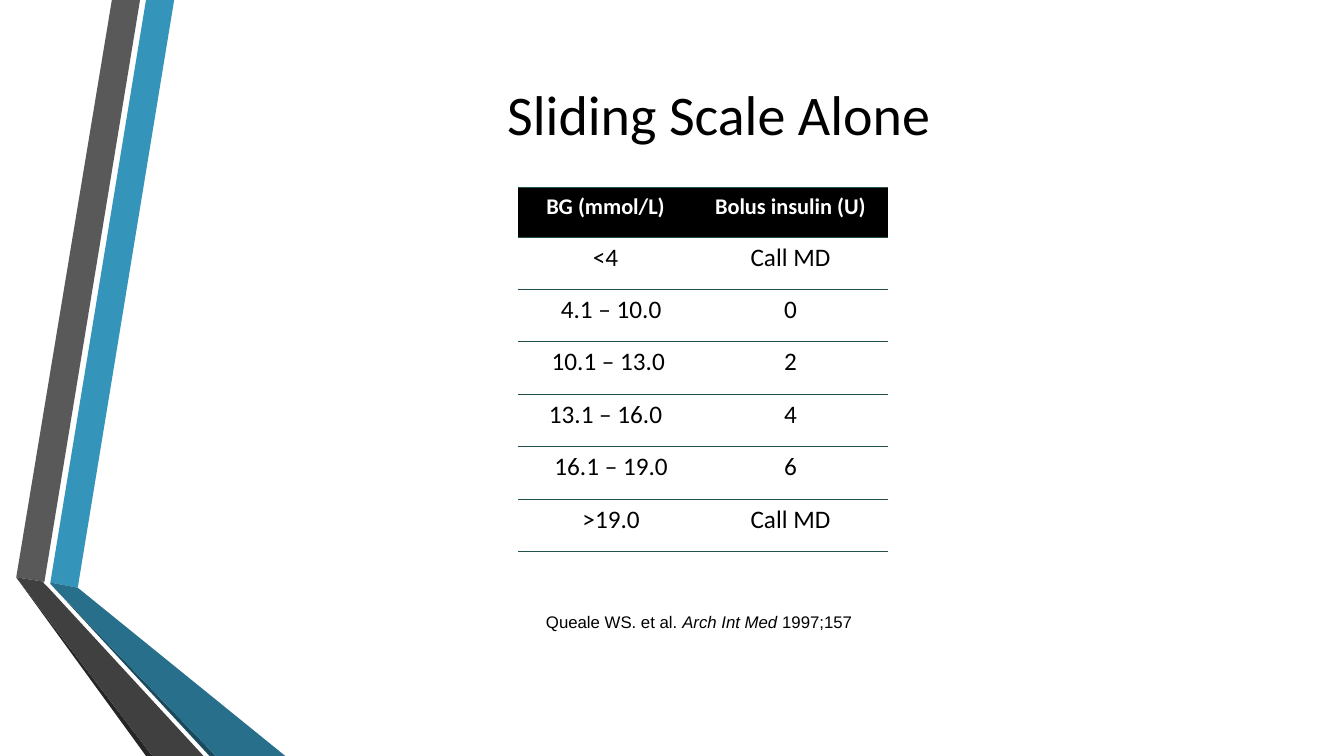
"""Builds the sliding scale insulin slide."""
from dataclasses import dataclass

from lxml import etree
from pptx import Presentation
from pptx.dml.color import RGBColor
from pptx.enum import text as text_enums
from pptx.oxml import ns
from pptx.slide import Slide
from pptx.table import _Cell
from pptx.text.text import _Paragraph
from pptx.util import Cm, Pt

COLOURS = {
    "black": "000000",
    "white": "FFFFFF",
    "rule": "23514E",
    "blue": "3494BA",
    "grey": "595959",
    "shadow": "262626",
    "navy": "1A4A5D",
    "teal": "276F8B",
    "charcoal": "404040",
}
CENTRE = text_enums.PP_ALIGN.CENTER


@dataclass(frozen=True)
class Ribbon:
    colour: str
    points: tuple[tuple[float, float], ...]


@dataclass(frozen=True)
class Dose:
    glucose: str
    insulin: str
    indent: float = 0


RIBBONS = (
    Ribbon("blue", ((1.27, 14.68), (1.96, 14.81), (4.39, 0), (3.68, 0))),
    Ribbon("grey", ((3.53, 0), (2.82, 0), (0.41, 14.55), (1.12, 14.66))),
    Ribbon("shadow", ((0.41, 14.55), (3.68, 19.05), (3.84, 19.05))),
    Ribbon("navy", ((1.27, 14.71), (5.28, 19.05), (5.44, 19.05))),
    Ribbon("teal", ((1.27, 14.68), (1.27, 14.71), (5.44, 19.05),
                    (7.19, 19.05), (1.96, 14.81))),
    Ribbon("charcoal", ((0.41, 14.55), (3.84, 19.05), (5.13, 19.05),
                        (1.22, 14.81), (1.09, 14.68), (1.12, 14.66))),
)
DOSES = (
    Dose("BG (mmol/L)", "Bolus insulin (U)"),
    Dose("<4", "Call MD"),
    Dose("4.1 – 10.0", "0", 0.28),
    Dose("10.1 – 13.0", "2", 0.14),
    Dose("13.1 – 16.0", "4"),
    Dose("16.1 – 19.0", "6", 0.28),
    Dose(">19.0", "Call MD", 0.28),
)
CITATION = (("Queale WS. et al. ", False), ("Arch Int Med", True), (" 1997;157", False))


def rgb(name: str) -> RGBColor:
    """Return a named colour."""
    return RGBColor.from_string(COLOURS[name])


def add_run(paragraph: _Paragraph, words: str, size: float, colour: str = "black",
            font: str = "Calibri", bold: bool = False, italic: bool = False) -> None:
    """Add one formatted run."""
    run = paragraph.add_run()
    run.text = words
    run.font.name, run.font.size = font, Pt(size)
    run.font.bold, run.font.italic = bold, italic
    run.font.color.rgb = rgb(colour)


def draw_ribbon(slide: Slide, ribbon: Ribbon) -> None:
    """Draw one filled piece of the folded ribbon."""
    start, *others = [(Cm(x), Cm(y)) for x, y in ribbon.points]
    builder = slide.shapes.build_freeform(*start)
    builder.add_line_segments(others, close=True)
    shape = builder.convert_to_shape()
    shape.shadow.inherit = False
    shape.fill.solid()
    shape.fill.fore_color.rgb = rgb(ribbon.colour)
    shape.line.fill.background()


def rule_cell(cell: _Cell) -> None:
    """Rule a cell above and below, and leave its sides open."""
    properties = cell._tc.get_or_add_tcPr()
    for side in ("lnL", "lnR", "lnT", "lnB"):
        line = etree.SubElement(properties, ns.qn(f"a:{side}"), w=str(Pt(0.5)))
        if side in ("lnL", "lnR"):
            etree.SubElement(line, ns.qn("a:noFill"))
        else:
            fill = etree.SubElement(line, ns.qn("a:solidFill"))
            etree.SubElement(fill, ns.qn("a:srgbClr"), val=COLOURS["rule"])


def fill_cell(cell: _Cell, words: str, is_header: bool, indent: float = 0) -> None:
    """Format a table cell and write its words."""
    rule_cell(cell)
    if is_header:
        cell.fill.solid()
        cell.fill.fore_color.rgb = rgb("black")
    else:
        cell.fill.background()
    cell.margin_left = Cm(0.25 + indent)
    cell.margin_right = Cm(0.25)
    cell.margin_top = cell.margin_bottom = Cm(0.13)
    paragraph = cell.text_frame.paragraphs[0]
    paragraph.alignment = CENTRE
    add_run(paragraph, words, 16 if is_header else 18,
            "white" if is_header else "black", bold=is_header)


def add_title(slide: Slide) -> None:
    """Place and write the title."""
    title = slide.shapes.title
    title.left, title.top, title.width, title.height = Cm(4.19), Cm(0.41), Cm(27.84), Cm(4.88)
    title.text_frame.vertical_anchor = text_enums.MSO_ANCHOR.MIDDLE
    paragraph = title.text_frame.paragraphs[0]
    paragraph.alignment = CENTRE
    add_run(paragraph, "Sliding Scale Alone", 40)


def add_dose_table(slide: Slide) -> None:
    """Add the table of insulin doses."""
    frame = slide.shapes.add_table(len(DOSES), 2, Cm(13.06), Cm(4.73), Cm(9.32), Cm(9.16))
    table = frame.table
    table.first_row = table.horz_banding = False
    table.columns[0].width, table.columns[1].width = Cm(4.4), Cm(4.92)
    for index, dose in enumerate(DOSES):
        is_header = index == 0
        table.rows[index].height = Cm(1.24 if is_header else 1.32)
        fill_cell(table.cell(index, 0), dose.glucose, is_header, dose.indent)
        fill_cell(table.cell(index, 1), dose.insulin, is_header)


def add_citation(slide: Slide) -> None:
    """Add the source below the table."""
    box = slide.shapes.add_textbox(Cm(13.51), Cm(15.29), Cm(11.63), Cm(0.77))
    box.text_frame.word_wrap = True
    paragraph = box.text_frame.paragraphs[0]
    for words, italic in CITATION:
        add_run(paragraph, words, 12, font="Arial", italic=italic)


def main() -> None:
    """Build and save the presentation."""
    presentation = Presentation()
    presentation.slide_width, presentation.slide_height = Cm(33.87), Cm(19.05)
    slide = presentation.slides.add_slide(presentation.slide_layouts[5])
    for ribbon in RIBBONS:
        draw_ribbon(slide, ribbon)
    add_title(slide)
    add_dose_table(slide)
    add_citation(slide)
    presentation.save("out.pptx")


if __name__ == "__main__":
    main()
